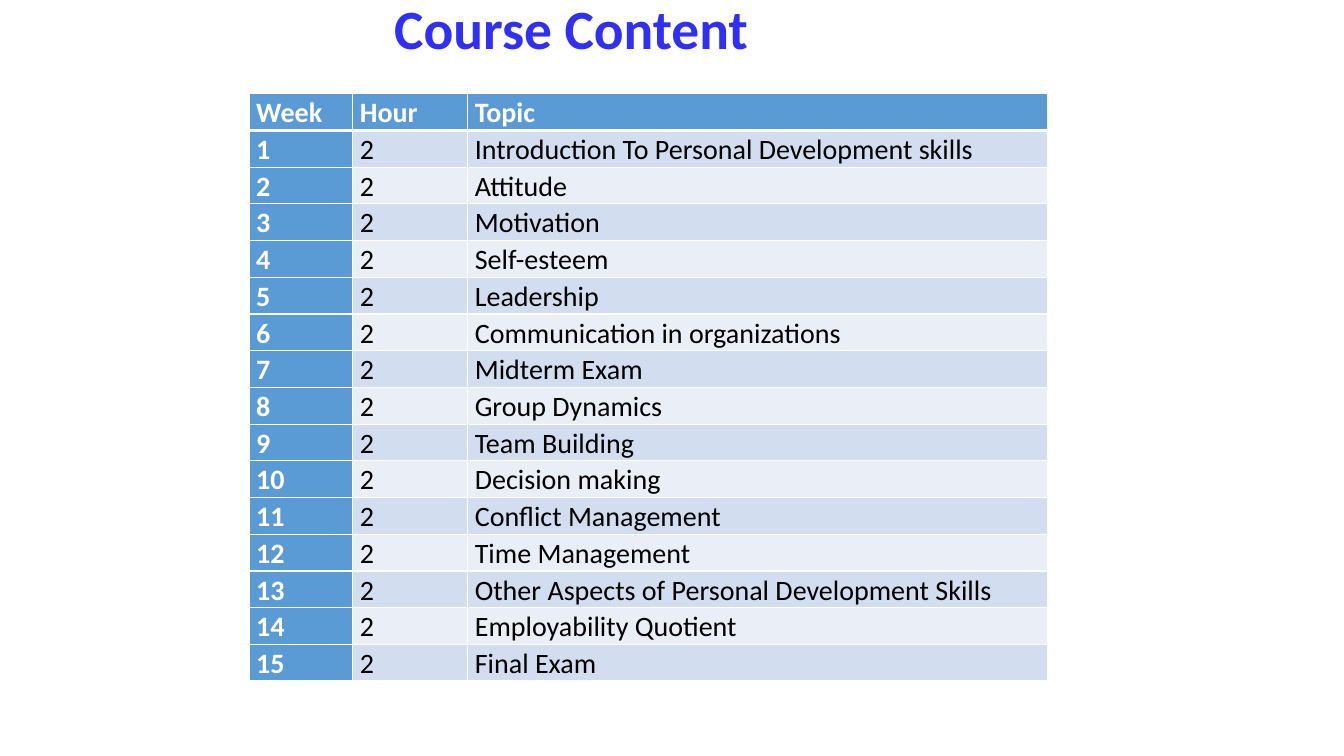
from dataclasses import dataclass

from lxml.etree import SubElement
from pptx import Presentation
from pptx.dml.color import RGBColor
from pptx.enum.text import MSO_ANCHOR, MSO_AUTO_SIZE, PP_ALIGN
from pptx.oxml.ns import qn
from pptx.util import Inches, Pt


@dataclass(frozen=True)
class Theme:
    font: str = "Calibri"
    title_size: float = 39.6
    table_size: float = 20
    title: str = "2F2FF7"
    accent: str = "5B9BD5"
    bands: tuple = ("D2DEEF", "EAEFF7")
    light: str = "FFFFFF"
    dark: str = "000000"
    thin: float = 1
    thick: float = 3


HEADER = ("Week", "Hour", "Topic")
HOURS_PER_WEEK = "2"
TOPICS = (
    "Introduction To Personal Development skills",
    "Attitude",
    "Motivation",
    "Self-esteem",
    "Leadership",
    "Communication in organizations",
    "Midterm Exam",
    "Group Dynamics",
    "Team Building",
    "Decision making",
    "Conflict Management",
    "Time Management",
    "Other Aspects of Personal Development Skills",
    "Employability Quotient",
    "Final Exam",
)


def write_text(text_frame, text, *, font, size, color, bold=False, spacing=1.0):
    paragraph = text_frame.paragraphs[0]
    paragraph.alignment = PP_ALIGN.LEFT
    paragraph.line_spacing = spacing
    run = paragraph.add_run()
    run.text = text
    run.font.name = font
    run.font.size = Pt(size)
    run.font.bold = bold
    run.font.color.rgb = RGBColor.from_string(color)


class SlideBuilder:
    def __init__(self, slide, theme):
        self.slide = slide
        self.theme = theme

    def add_title(self, text, left, top, width, height):
        title = self.slide.shapes.title
        title.left, title.top = Inches(left), Inches(top)
        title.width, title.height = Inches(width), Inches(height)
        text_frame = title.text_frame
        text_frame.word_wrap = True
        text_frame.auto_size = MSO_AUTO_SIZE.NONE
        text_frame.vertical_anchor = MSO_ANCHOR.MIDDLE
        write_text(text_frame, text, font=self.theme.font, size=self.theme.title_size,
                   color=self.theme.title, bold=True, spacing=0.9)

    def add_table(self, rows, left, top, column_widths, row_height):
        table = self.slide.shapes.add_table(
            len(rows), len(column_widths), Inches(left), Inches(top),
            Inches(sum(column_widths)), Inches(row_height * len(rows))).table
        table.first_col = True
        for column, width in zip(table.columns, column_widths):
            column.width = Inches(width)
        for row_index, values in enumerate(rows):
            for column_index, value in enumerate(values):
                self.format_cell(table.cell(row_index, column_index), value,
                                 row_index, column_index)

    def format_cell(self, cell, text, row_index, column_index):
        theme = self.theme
        is_heading = row_index == 0 or column_index == 0
        cell.margin_left = cell.margin_right = Inches(0.07)
        cell.margin_top = cell.margin_bottom = 0
        # Borders go in before the fill, as the schema orders them
        self.add_border(cell, "a:lnL", theme.thin)
        self.add_border(cell, "a:lnR", theme.thin)
        self.add_border(cell, "a:lnT", theme.thick if row_index == 1 else theme.thin)
        self.add_border(cell, "a:lnB", theme.thick if row_index == 0 else theme.thin)
        fill_color = theme.accent if is_heading else theme.bands[(row_index - 1) % 2]
        cell.fill.solid()
        cell.fill.fore_color.rgb = RGBColor.from_string(fill_color)
        write_text(cell.text_frame, text, font=theme.font, size=theme.table_size,
                   color=theme.light if is_heading else theme.dark,
                   bold=is_heading, spacing=1.07)

    def add_border(self, cell, tag, width):
        properties = cell._tc.get_or_add_tcPr()
        line = SubElement(properties, qn(tag), w=str(Pt(width)))
        fill = SubElement(line, qn("a:solidFill"))
        SubElement(fill, qn("a:srgbClr"), val=self.theme.light)


def main():
    presentation = Presentation()
    presentation.slide_width = Inches(13.33)
    presentation.slide_height = Inches(7.5)
    title_only = presentation.slide_layouts[5]
    builder = SlideBuilder(presentation.slides.add_slide(title_only), Theme())

    # Title
    builder.add_title("Course Content", 3.81, 0.17, 11.5, 0.28)

    # Weekly schedule
    weeks = [(str(week), HOURS_PER_WEEK, topic)
             for week, topic in enumerate(TOPICS, start=1)]
    builder.add_table([HEADER, *weeks], 2.47, 0.93, (1.03, 1.14, 5.75), 0.36)

    presentation.save("out.pptx")


if __name__ == "__main__":
    main()
